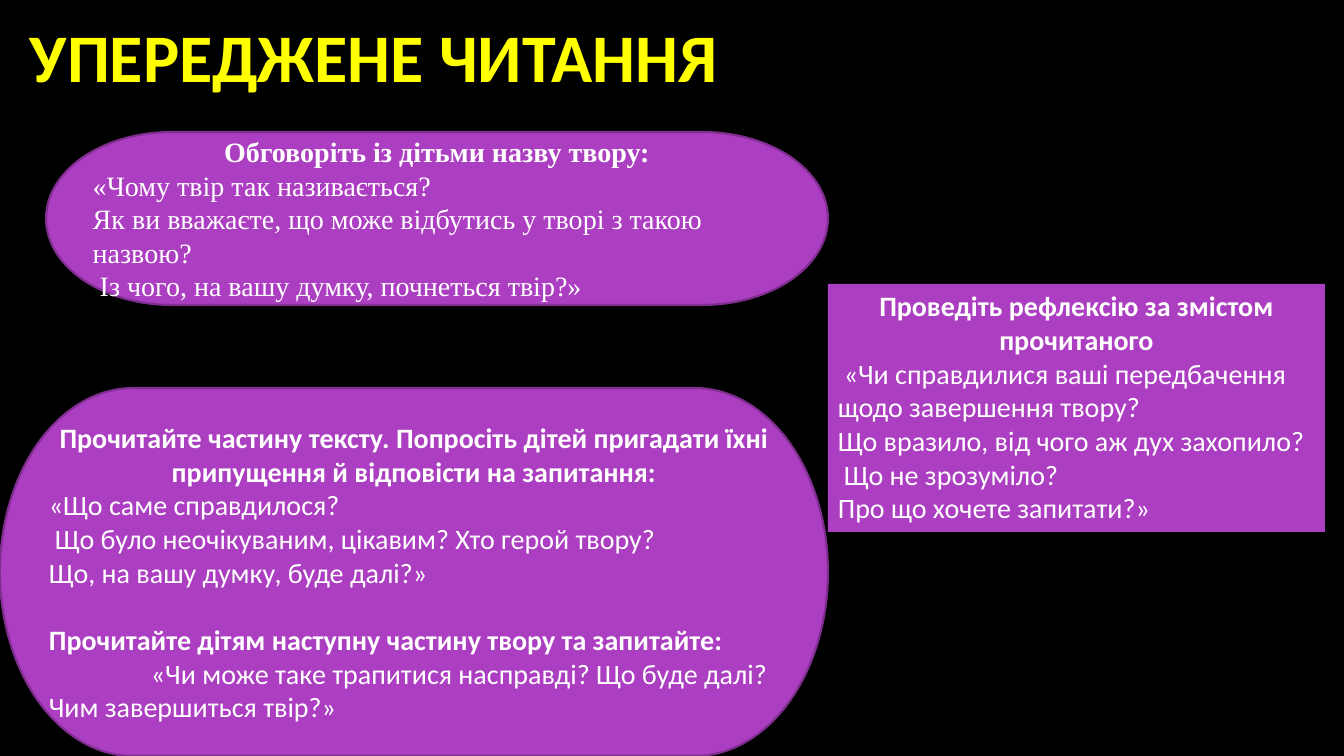
from pptx import Presentation
from pptx.dml.color import RGBColor
from pptx.enum.shapes import MSO_SHAPE
from pptx.enum.text import MSO_ANCHOR, PP_ALIGN
from pptx.util import Pt

TERMINATOR, RECTANGLE = MSO_SHAPE.FLOWCHART_TERMINATOR, MSO_SHAPE.RECTANGLE
LEFT, CENTER = PP_ALIGN.LEFT, PP_ALIGN.CENTER
MIDDLE, TOP = MSO_ANCHOR.MIDDLE, MSO_ANCHOR.TOP
PX = 914400 / 100.8


def px(length):
    return round(length * PX)


def color(hex_code):
    return RGBColor.from_string(hex_code)


deck = Presentation()
deck.slide_width, deck.slide_height = px(1344), px(756)
slide = deck.slides.add_slide(deck.slide_layouts[6])
slide.background.fill.solid()
slide.background.fill.fore_color.rgb = color("000000")

# Title
title = slide.shapes.add_textbox(px(20), px(15), px(736), px(81))
title.text_frame.word_wrap = True
title.text_frame.vertical_anchor = MIDDLE
heading = title.text_frame.paragraphs[0]
heading.text = "УПЕРЕДЖЕНЕ ЧИТАННЯ"
heading.font.name, heading.font.size, heading.font.bold = "Calibri", Pt(48.6), True
heading.font.color.rgb = color("FFFF00")

# Reading stages: shape, box, outline, font, anchor,
# then lines as (text, bold, alignment, first-line indent px, space before pt)
stages = [
    (TERMINATOR, (46, 132, 782, 173), "7F2E8F", "Times New Roman", MIDDLE, [
        ("Обговоріть із дітьми назву твору:", True, CENTER, 0, 0),
        ("«Чому твір так називається?", False, LEFT, 0, 0),
        ("Як ви вважаєте, що може відбутись у творі з такою назвою?", False, LEFT, 0, 0),
        ("Із чого, на вашу думку, почнеться твір?»", False, LEFT, 7, 0),
    ]),
    (TERMINATOR, (0, 388, 828, 368), "7F2E8F", "Calibri", MIDDLE, [
        ("Прочитайте частину тексту. Попросіть дітей пригадати їхні "
         "припущення й відповісти на запитання:", True, CENTER, 0, 0),
        ("«Що саме справдилося?", False, LEFT, 0, 0),
        ("Що було неочікуваним, цікавим? Хто герой твору?", False, LEFT, 6, 0),
        ("Що, на вашу думку, буде далі?»", False, LEFT, 0, 0),
        ("Прочитайте дітям наступну частину твору та запитайте:", True, LEFT, 0, 24),
        ("«Чи може таке трапитися насправді? Що буде далі? "
         "Чим завершиться твір?»", False, LEFT, 102, 0),
    ]),
    (RECTANGLE, (828, 284, 497, 248), None, "Calibri", TOP, [
        ("Проведіть рефлексію за змістом прочитаного", True, CENTER, 0, 0),
        ("«Чи справдилися ваші передбачення щодо завершення твору?", False, LEFT, 6, 0),
        ("Що вразило, від чого аж дух захопило?", False, LEFT, 0, 0),
        ("Що не зрозуміло?", False, LEFT, 6, 0),
        ("Про що хочете запитати?»", False, LEFT, 0, 0),
    ]),
]

for outline_kind, box, border, font_name, anchor, lines in stages:
    stage = slide.shapes.add_shape(outline_kind, *[px(side) for side in box])
    stage.shadow.inherit = False
    stage.fill.solid()
    stage.fill.fore_color.rgb = color("AC3EC1")
    if border:
        stage.line.color.rgb = color(border)
        stage.line.width = Pt(1.5)
    else:
        stage.line.fill.background()

    frame = stage.text_frame
    frame.word_wrap = True
    frame.vertical_anchor = anchor
    for number, (wording, bold, alignment, indent, gap) in enumerate(lines):
        line = frame.add_paragraph() if number else frame.paragraphs[0]
        line.text = wording
        line.alignment = alignment
        if indent:
            line._p.get_or_add_pPr().set("indent", str(px(indent)))
        if gap:
            line.space_before = Pt(gap)
        line.font.name, line.font.size, line.font.bold = font_name, Pt(20), bold
        line.font.color.rgb = color("FFFFFF")

deck.save("out.pptx")
